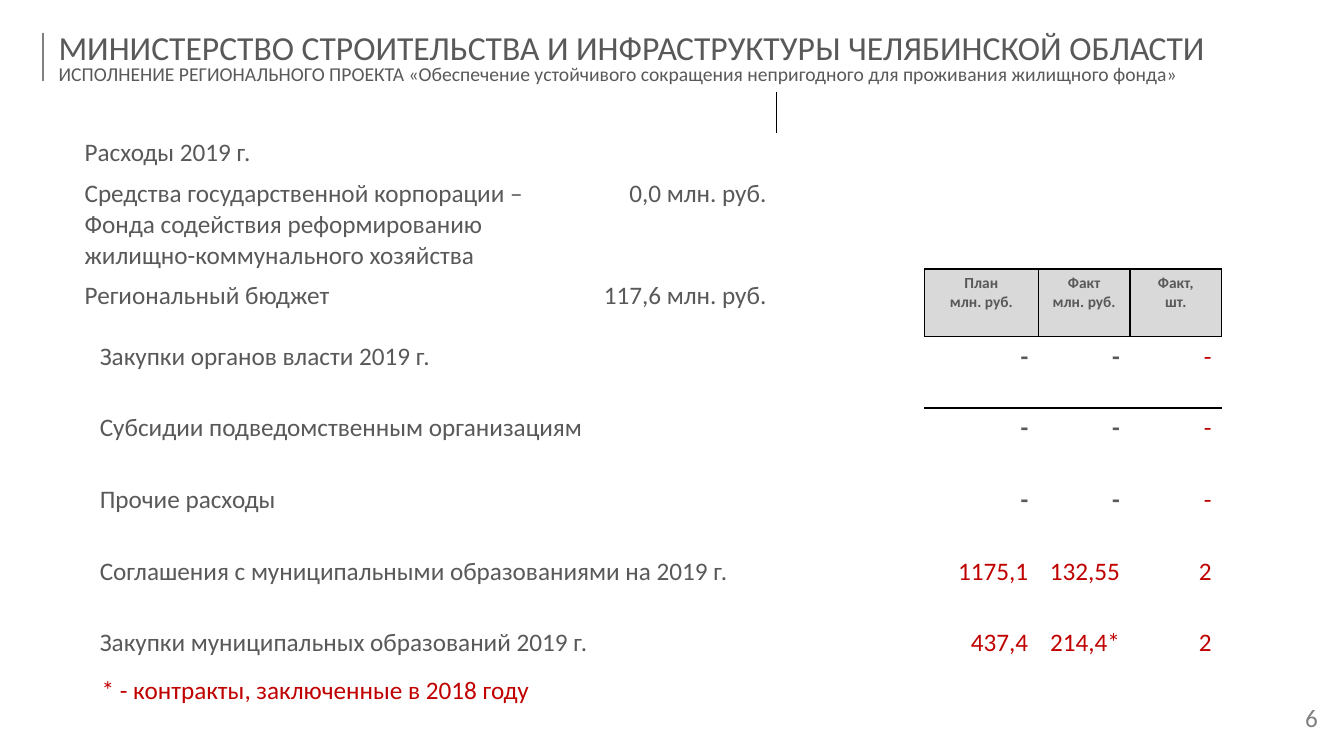
import pptx
import pptx.util
import pptx.dml.color
import pptx.enum.shapes
import pptx.enum.text
import pptx.oxml
import pptx.oxml.ns

Pt = pptx.util.Pt
ALIGN = pptx.enum.text.PP_ALIGN
ANCHOR = pptx.enum.text.MSO_ANCHOR

COLORS = {"text": "595959", "accent": "C00000", "gray": "808080",
          "header": "D9D9D9", "border": "000000"}
FONT = "Calibri"
NO_STYLE = "{2D5ABB26-0587-4C30-8999-92F81FD0307C}"

TITLE = [
    ("МИНИСТЕРСТВО СТРОИТЕЛЬСТВА И ИНФРАСТРУКТУРЫ ЧЕЛЯБИНСКОЙ ОБЛАСТИ", 24),
    ("ИСПОЛНЕНИЕ РЕГИОНАЛЬНОГО ПРОЕКТА «Обеспечение устойчивого сокращения "
     "непригодного для проживания жилищного фонда»", 14),
]
FUNDING = [
    ("", "", ""),
    ("", "Расходы 2019 г.", ""),
    ("", "Средства государственной корпорации – Фонда содействия реформированию "
     "жилищно-коммунального хозяйства", "0,0 млн. руб."),
    ("", "Региональный бюджет", "117,6 млн. руб."),
]
SPENDING = [
    ("", "", "План\nмлн. руб.", "Факт\nмлн. руб.", "Факт,\nшт."),
    ("", "Закупки органов власти 2019 г.", "-", "-", "-"),
    ("", "Субсидии подведомственным организациям", "-", "-", "-"),
    ("", "Прочие расходы", "-", "-", "-"),
    ("", "Соглашения с муниципальными образованиями на 2019 г.", "1175,1", "132,55", "2"),
    ("", "Закупки муниципальных образований 2019 г.", "437,4", "214,4*", "2"),
]
FOOTNOTE = "* - контракты, заключенные в 2018 году"
PAGE_NUMBER = "6"

FUNDING_GRID = {"left": 36, "top": 65.5, "columns": [16.5, 346.5, 155],
                "rows": [29.2, 29.2, 73.1, 43.2]}
SPENDING_GRID = {"left": 40.3, "top": 192.2, "columns": [23.8, 596.2, 81.4, 65.5, 65.5],
                 "rows": [48] + [51.2] * 5}


def rgb(name):
    return pptx.dml.color.RGBColor.from_string(COLORS[name])


def write(frame, lines, align=ALIGN.LEFT, color="text", bold=False, spacing=None):
    for index, (text, size) in enumerate(lines):
        paragraph = frame.paragraphs[0] if index == 0 else frame.add_paragraph()
        paragraph.alignment = align
        if spacing:
            paragraph.line_spacing = spacing
        run = paragraph.add_run()
        run.text = text
        for name, value in {"name": FONT, "size": Pt(size), "bold": bold}.items():
            setattr(run.font, name, value)
        run.font.color.rgb = rgb(color)


def format_frame(frame, anchor, wrap=True):
    values = {"word_wrap": wrap, "vertical_anchor": anchor,
              "auto_size": pptx.enum.text.MSO_AUTO_SIZE.NONE,
              "margin_left": Pt(7.2), "margin_right": Pt(7.2),
              "margin_top": Pt(3.6), "margin_bottom": Pt(3.6)}
    for name, value in values.items():
        setattr(frame, name, value)


def add_text(slide, box, lines, anchor, **style):
    frame = slide.shapes.add_textbox(*map(Pt, box)).text_frame
    format_frame(frame, anchor)
    write(frame, lines, **style)


def add_border(cell, sides):
    properties = cell._tc.get_or_add_tcPr()
    for side in sides:
        properties.append(pptx.oxml.parse_xml(
            f'<a:ln{side} {pptx.oxml.ns.nsdecls("a")} w="12700"><a:solidFill>'
            f'<a:srgbClr val="{COLORS["border"]}"/></a:solidFill></a:ln{side}>'))


def funding_style(row, column, text):
    return {"size": 18, "align": ALIGN.RIGHT if column == 2 else ALIGN.LEFT,
            "borders": "R" if (row, column) == (0, 2) else ""}


def spending_style(row, column, text):
    if column < 2:
        return {"size": 18, "borders": "R" if (row, column) == (0, 1) else ""}
    if row == 0:
        return {"size": 11, "align": ALIGN.CENTER, "bold": True,
                "borders": "LRTB", "fill": "header"}
    plain_dash = text == "-" and column < 4
    return {"size": 18, "align": ALIGN.RIGHT, "bold": plain_dash,
            "color": "text" if plain_dash else "accent",
            "borders": "T" if row == 1 else ""}


def add_table(slide, grid, content, style_for):
    shape = slide.shapes.add_table(
        len(grid["rows"]), len(grid["columns"]), Pt(grid["left"]), Pt(grid["top"]),
        Pt(sum(grid["columns"])), Pt(sum(grid["rows"])))
    table = shape.table
    table.first_row = table.horz_banding = False
    table._tbl.tblPr.find(pptx.oxml.ns.qn("a:tableStyleId")).text = NO_STYLE
    for column, width in zip(table.columns, grid["columns"]):
        column.width = Pt(width)
    for row, height in zip(table.rows, grid["rows"]):
        row.height = Pt(height)
    for row, texts in enumerate(content):
        for column, text in enumerate(texts):
            cell = table.cell(row, column)
            style = style_for(row, column, text)
            size = style.pop("size")
            add_border(cell, style.pop("borders"))
            fill = style.pop("fill", None)
            if fill:
                cell.fill.solid()
                cell.fill.fore_color.rgb = rgb(fill)
            else:
                cell.fill.background()
            if text:
                write(cell.text_frame, [(line, size) for line in text.split("\n")], **style)


def main():
    presentation = pptx.Presentation()
    presentation.slide_width, presentation.slide_height = Pt(960), Pt(540)
    slide = presentation.slides.add_slide(presentation.slide_layouts[5])

    title = slide.shapes.title
    title.left, title.top, title.width, title.height = map(Pt, (34.6, 18.7, 971.3, 48.2))
    format_frame(title.text_frame, ANCHOR.MIDDLE)
    write(title.text_frame, TITLE, spacing=0.8)

    rule = slide.shapes.add_connector(
        pptx.enum.shapes.MSO_CONNECTOR.STRAIGHT, Pt(31), Pt(23.8), Pt(31), Pt(57.6))
    rule.line.color.rgb = rgb("gray")
    rule.line.width = Pt(1.5)
    rule._element.spPr.append(
        pptx.oxml.parse_xml(f'<a:effectLst {pptx.oxml.ns.nsdecls("a")}/>'))

    add_table(slide, SPENDING_GRID, SPENDING, spending_style)
    add_table(slide, FUNDING_GRID, FUNDING, funding_style)
    add_text(slide, (65.5, 478, 602.6, 29), [(FOOTNOTE, 18)], ANCHOR.TOP, color="accent")
    add_text(slide, (895, 496.8, 83.5, 36), [(PAGE_NUMBER, 18)], ANCHOR.MIDDLE,
             align=ALIGN.CENTER, color="gray", spacing=0.8)
    presentation.save("out.pptx")


if __name__ == "__main__":
    main()
